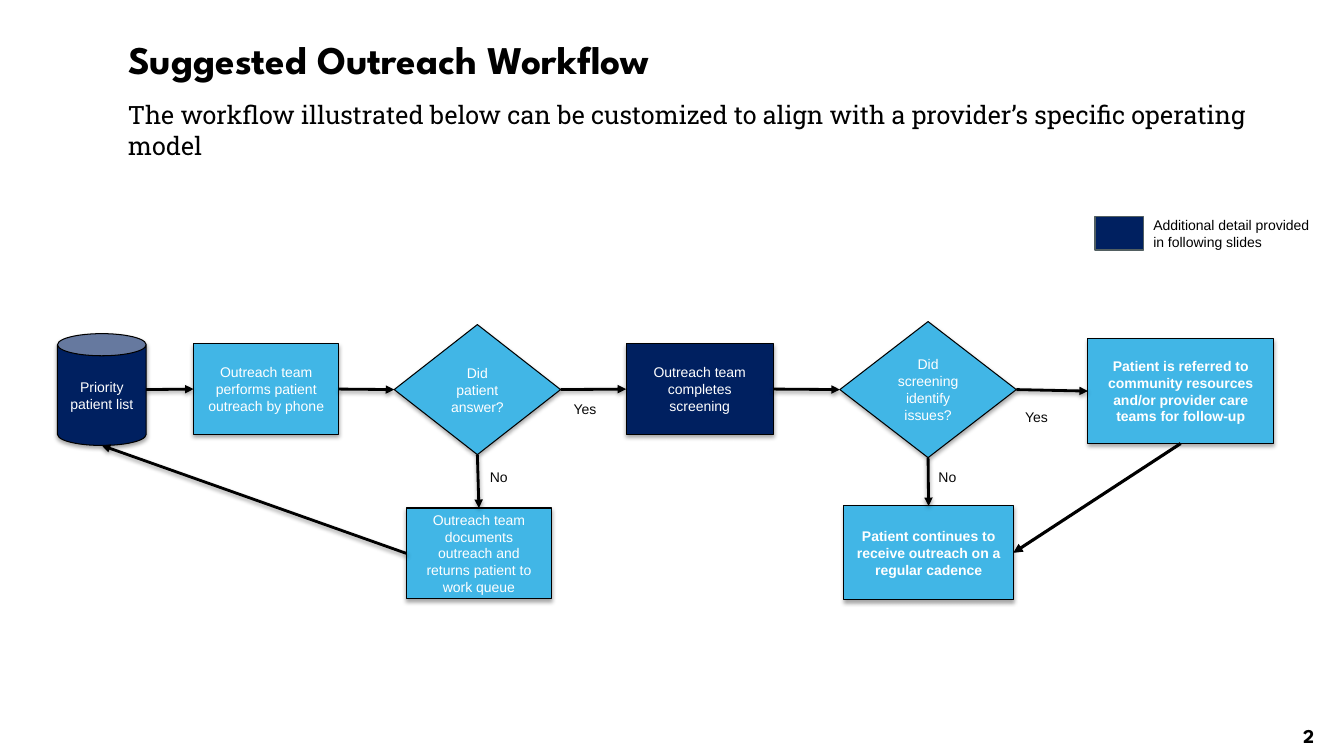
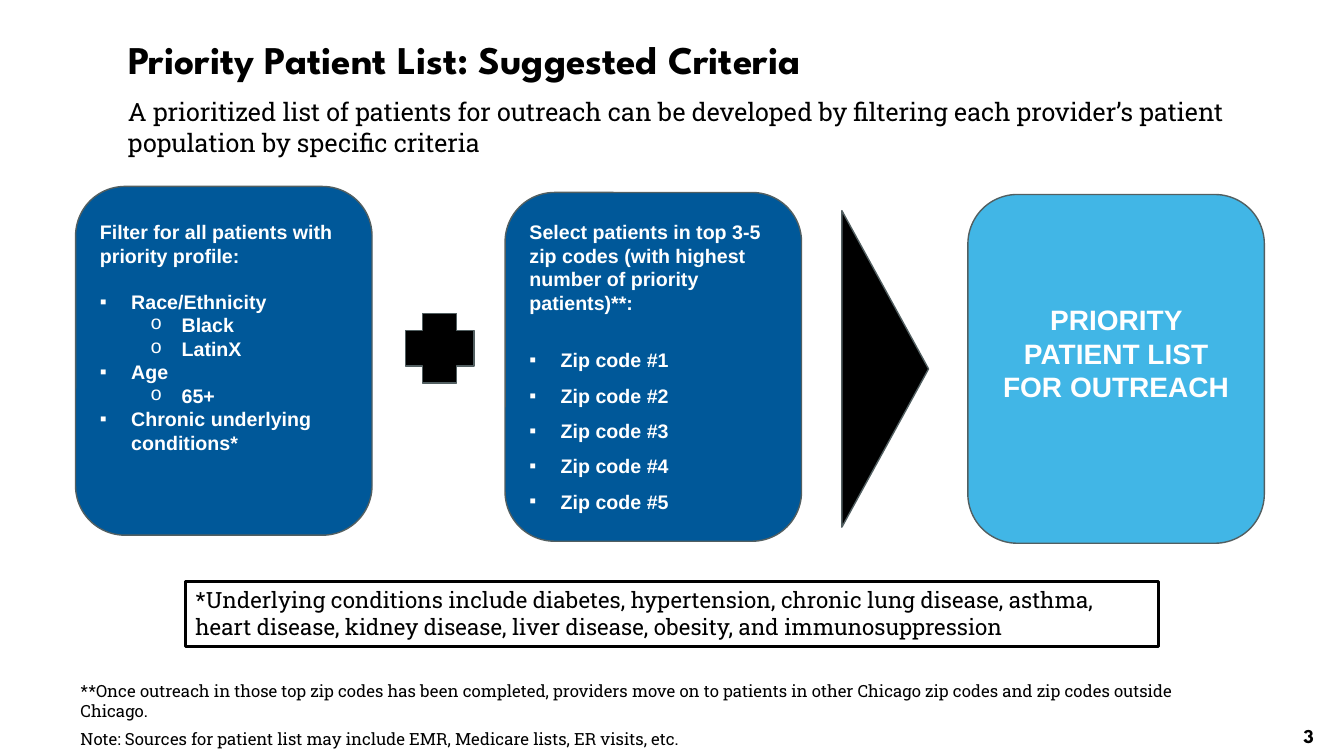
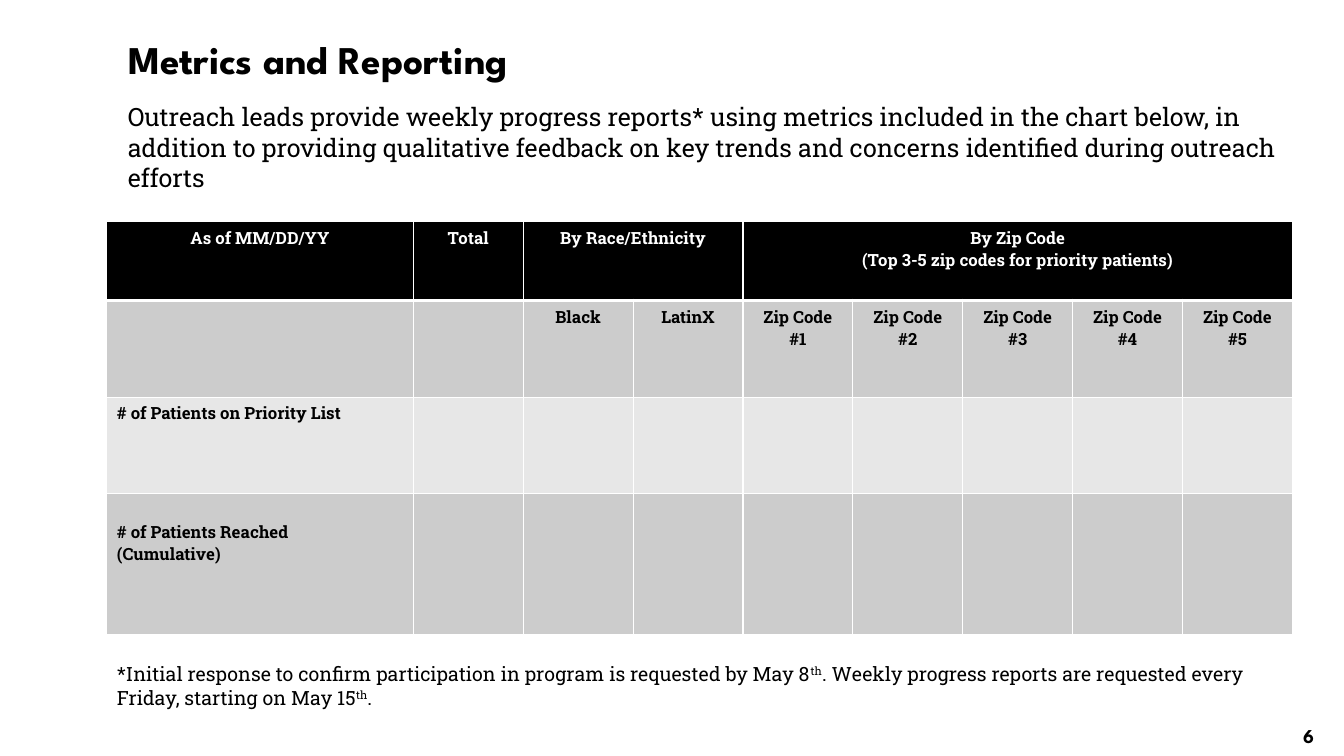
from dataclasses import dataclass

from lxml import etree
from pptx import Presentation
from pptx.dml.color import RGBColor
from pptx.enum import shapes, text
from pptx.oxml import ns
from pptx.util import Inches, Pt

BLACK = RGBColor(0x00, 0x00, 0x00)
WHITE = RGBColor(0xFF, 0xFF, 0xFF)
LABEL = RGBColor(0x08, 0x08, 0x08)
NAVY = RGBColor(0x00, 0x20, 0x60)
BLUE = RGBColor(0x00, 0x58, 0x99)
SKY = RGBColor(0x41, 0xB6, 0xE6)
OUTLINE = RGBColor(0x52, 0x5F, 0x61)
GREY = RGBColor(0xCC, 0xCC, 0xCC)
PALE = RGBColor(0xE7, 0xE7, 0xE7)

HEAD, SERIF, SANS = "League Spartan", "Roboto Slab", "Arial"
SHAPE = shapes.MSO_SHAPE
ALIGN = text.PP_ALIGN
ANCHOR = text.MSO_ANCHOR
TOP, LEFT, BOTTOM, RIGHT = range(4)
BULLETS = {"▪": SANS, "o": "Courier New"}


@dataclass
class Line:
    words: str
    bullet: str = ""
    level: int = 0
    spacing: float = 1
    before: float = 0


@dataclass
class Style:
    size: float
    font: str = SANS
    color: RGBColor = BLACK
    bold: bool = False
    align: ALIGN = ALIGN.LEFT


def add_xml(parent, tag, **attributes):
    return etree.SubElement(parent, ns.qn(tag), attributes)


def add_color(parent, color):
    return add_xml(add_xml(parent, "a:solidFill"), "a:srgbClr", val=str(color))


def add_shadow(effects, distance, opacity):
    shadow = add_xml(effects, "a:outerShdw", blurRad=str(Pt(3.1)), dist=str(Pt(distance)),
                     dir="5400000", rotWithShape="0")
    color = add_xml(shadow, "a:srgbClr", val=str(BLACK))
    add_xml(color, "a:alpha", val=str(opacity * 1000))


def side_point(shape, side):
    x = {LEFT: 0, RIGHT: shape.width}.get(side, shape.width // 2)
    y = {TOP: 0, BOTTOM: shape.height}.get(side, shape.height // 2)
    return shape.left + x, shape.top + y


def write(frame, lines, style):
    for index, line in enumerate(lines):
        if isinstance(line, str):
            line = Line(line)
        paragraph = frame.paragraphs[0] if index == 0 else frame.add_paragraph()
        for part, words in enumerate(line.words.split("^")):
            run = paragraph.add_run()
            run.text = words
            if part % 2:
                run._r.get_or_add_rPr().set("baseline", "30000")
        if line.bullet:
            properties = paragraph._p.get_or_add_pPr()
            properties.set("marL", str(Inches(0.31 + 0.5 * line.level)))
            properties.set("indent", str(Inches(-0.31)))
            add_xml(properties, "a:buFont", typeface=BULLETS[line.bullet])
            add_xml(properties, "a:buChar", char=line.bullet)
            paragraph.level = line.level
        if line.spacing != 1:
            paragraph.line_spacing = line.spacing
        if line.before:
            paragraph.space_before = Pt(line.before)
        paragraph.alignment = style.align
        font = paragraph.font
        font.name, font.size, font.bold = style.font, Pt(style.size), style.bold
        font.color.rgb = style.color


class Deck:
    TITLE = Style(28, HEAD, bold=True)
    NUMBER = Style(14, HEAD, bold=True, align=ALIGN.CENTER)
    LEAD = Style(18, SERIF)

    def __init__(self):
        self.file = Presentation()
        self.file.slide_width = Inches(13.33)
        self.file.slide_height = Inches(7.5)
        self.slide = None

    def start(self, heading, number, lead, lead_at):
        self.slide = self.file.slides.add_slide(self.file.slide_layouts[5])
        title = self.slide.shapes.title
        title.left, title.top, title.width, title.height = map(Inches, (1.17, 0, 11, 1.23))
        title.text_frame.auto_size = text.MSO_AUTO_SIZE.NONE
        title.text_frame.vertical_anchor = ANCHOR.MIDDLE
        write(title.text_frame, [Line(heading, spacing=0.9)], self.TITLE)
        self.words((12.63, 7.1, 0.7, 0.4), [number], self.NUMBER, anchor=ANCHOR.MIDDLE)
        self.words(lead_at, [lead], self.LEAD)

    def words(self, at, lines, style, anchor=ANCHOR.TOP, wrap=True):
        box = self.slide.shapes.add_textbox(*map(Inches, at))
        box.text_frame.word_wrap = wrap
        box.text_frame.vertical_anchor = anchor
        write(box.text_frame, lines, style)

    def shape(self, kind, at, fill=None, line=OUTLINE, width=1, lines=(), style=None,
              margin_top=None):
        shape = self.slide.shapes.add_shape(kind, *map(Inches, at))
        if fill is None:
            shape.fill.background()
        else:
            shape.fill.solid()
            shape.fill.fore_color.rgb = fill
        shape.line.color.rgb = line
        shape.line.width = Pt(width)
        shape.shadow.inherit = False
        frame = shape.text_frame
        frame.word_wrap = True
        if margin_top is not None:
            frame.vertical_anchor = ANCHOR.TOP
            frame.margin_top = Inches(margin_top)
        if lines:
            write(frame, lines, style)
        return shape

    def step(self, kind, at, words, fill=SKY, bold=False):
        style = Style(10, color=WHITE, bold=bold, align=ALIGN.CENTER)
        step = self.shape(kind, at, fill, BLACK, 0.75, [words], style)
        add_shadow(step._element.spPr.find(ns.qn("a:effectLst")), 1.8, 35)
        return step

    def arrow(self, origin, origin_side, target, target_side, width=2, shadow=True):
        arrow = self.slide.shapes.add_connector(
            shapes.MSO_CONNECTOR.STRAIGHT,
            *side_point(origin, origin_side), *side_point(target, target_side))
        if origin.auto_shape_type != SHAPE.CAN:
            arrow.begin_connect(origin, origin_side)
        if target.auto_shape_type != SHAPE.CAN:
            arrow.end_connect(target, target_side)
        arrow.line.color.rgb = BLACK
        arrow.line.width = Pt(width)
        add_xml(arrow.line._get_or_add_ln(), "a:tailEnd", type="triangle")
        effects = add_xml(arrow._element.spPr, "a:effectLst")
        if shadow:
            add_shadow(effects, 1.6, 38)

    def table(self, at, widths, heights):
        table = self.slide.shapes.add_table(len(heights), len(widths), *map(Inches, at)).table
        table.first_row = table.horz_banding = False
        for column, width in zip(table.columns, widths):
            column.width = Inches(width)
        for row, height in zip(table.rows, heights):
            row.height = Inches(height)
        return table

    def cell(self, cell, fill, top=1, bottom=1):
        cell.fill.solid()
        cell.fill.fore_color.rgb = fill
        properties = cell._tc.get_or_add_tcPr()
        borders = {"a:lnL": 1, "a:lnR": 1, "a:lnT": top, "a:lnB": bottom}
        for index, (tag, width) in enumerate(borders.items()):
            border = add_xml(properties, tag, w=str(Pt(width)))
            add_color(border, WHITE)
            properties.insert(index, border)


def workflow(deck):
    deck.start("Suggested Outreach Workflow", "2",
               "The workflow illustrated below can be customized to align with a provider’s "
               "specific operating model", (1.17, 0.94, 11.58, 0.71))
    patients = deck.step(SHAPE.CAN, (0.57, 3.31, 0.88, 1.11), "Priority patient list", NAVY)
    call = deck.step(SHAPE.RECTANGLE, (1.92, 3.41, 1.44, 0.9),
                     "Outreach team performs patient outreach by phone")
    answered = deck.step(SHAPE.FLOWCHART_DECISION, (3.91, 3.22, 1.65, 1.29),
                         "Did patient answer?")
    requeue = deck.step(SHAPE.RECTANGLE, (4.03, 5.04, 1.44, 0.9),
                        "Outreach team documents outreach and returns patient to work queue")
    screening = deck.step(SHAPE.RECTANGLE, (6.21, 3.41, 1.46, 0.9),
                          "Outreach team completes screening", NAVY)
    issues = deck.step(SHAPE.FLOWCHART_DECISION, (8.33, 3.19, 1.75, 1.35),
                       "Did screening identify issues?")
    referral = deck.step(SHAPE.RECTANGLE, (10.79, 3.36, 1.84, 1.04),
                         "Patient is referred to community resources and/or provider care "
                         "teams for follow-up", bold=True)
    cadence = deck.step(SHAPE.RECTANGLE, (8.37, 5.02, 1.68, 0.93),
                        "Patient continues to receive outreach on a regular cadence", bold=True)

    path_steps = [patients, call, answered, screening, issues, referral]
    for origin, target in zip(path_steps, path_steps[1:]):
        deck.arrow(origin, RIGHT, target, LEFT)
    deck.arrow(answered, BOTTOM, requeue, TOP)
    deck.arrow(requeue, LEFT, patients, BOTTOM)
    deck.arrow(issues, BOTTOM, cadence, TOP)
    deck.arrow(referral, BOTTOM, cadence, RIGHT, 2.25, shadow=False)

    for answer, left, top in (("No", 4.76, 4.6), ("Yes", 5.59, 3.92),
                              ("No", 9.21, 4.6), ("Yes", 10.07, 4)):
        deck.words((left, top, 0.57, 0.27), [answer], Style(10, color=LABEL))
    deck.shape(SHAPE.RECTANGLE, (10.86, 2.15, 0.48, 0.33), NAVY)
    deck.words((11.34, 2.1, 1.8, 0.44),
               ["Additional detail provided", "in following slides"], Style(10), wrap=False)


def criteria(deck):
    deck.start("Priority Patient List: Suggested Criteria", "3",
               "A prioritized list of patients for outreach can be developed by filtering each "
               "provider’s patient population by specific criteria", (1.17, 0.91, 12.05, 0.71))
    profile = [
        Line("Filter for all patients with priority profile:"),
        Line("Race/Ethnicity", "▪", before=16),
        Line("Black", "o", 1),
        Line("LatinX", "o", 1),
        Line("Age", "▪"),
        Line("65+", "o", 1),
        Line("Chronic underlying conditions*", "▪"),
    ]
    zip_codes = [Line("Select patients in top 3-5 zip codes (with highest number of priority "
                      "patients)**:")]
    zip_codes += [Line(f"Zip code #{n}", "▪", spacing=1.5, before=16 if n == 1 else 0)
                  for n in range(1, 6)]
    listed = Style(14, color=WHITE, bold=True)
    result = Style(20, color=WHITE, bold=True, align=ALIGN.CENTER)
    for left, top, fill, lines, style, margin in (
            (0.75, 1.85, BLUE, profile, listed, 0.19),
            (5.01, 1.91, BLUE, zip_codes, listed, 0.13),
            (9.6, 1.93, SKY, ["PRIORITY PATIENT LIST FOR OUTREACH"], result, 0.93)):
        deck.shape(SHAPE.ROUNDED_RECTANGLE, (left, top, 2.94, 3.46), fill,
                   lines=lines, style=style, margin_top=margin)
    deck.shape(SHAPE.CROSS, (4.02, 3.11, 0.68, 0.69), BLACK)
    pointer = deck.shape(SHAPE.PENTAGON, (8.35, 2.09, 0.86, 3.14), BLACK)
    pointer.adjustments[0] = 1
    deck.shape(SHAPE.RECTANGLE, (1.84, 5.77, 9.65, 0.64), None, BLACK, 2.25,
               ["*Underlying conditions include diabetes, hypertension, chronic lung disease, "
                "asthma, heart disease, kidney disease, liver disease, obesity, and "
                "immunosuppression"], Style(16, SERIF), 0.05)
    deck.words((0.7, 6.7, 11.47, 0.79),
               ["**Once outreach in those top zip codes has been completed, providers move on "
                "to patients in other Chicago zip codes and zip codes outside Chicago.",
                Line("Note: Sources for patient list may include EMR, Medicare lists, "
                     "ER visits, etc.", before=6)], Style(12, SERIF))


def metrics(deck):
    deck.start("Metrics and Reporting", "6",
               "Outreach leads provide weekly progress reports* using metrics included in the "
               "chart below, in addition to providing qualitative feedback on key trends and "
               "concerns identified during outreach efforts", (1.17, 0.96, 11.77, 1.01))
    table = deck.table((1.06, 2.2, 11.79, 4.1), [3.04] + [1.09] * 8, [0.78, 0.96, 0.96, 1.4])
    for row, fill in enumerate((BLACK, GREY, PALE, GREY)):
        for column in range(9):
            deck.cell(table.cell(row, column), fill,
                      top=3 if row == 1 else 1, bottom=3 if row == 0 else 1)
    for first, last in ((2, 3), (4, 8)):
        table.cell(0, first).merge(table.cell(0, last))

    header = Style(12, SERIF, WHITE, True, ALIGN.CENTER)
    group = Style(12, SERIF, BLACK, True, ALIGN.CENTER)
    measure = Style(12, SERIF, BLACK, True)
    entries = [
        (0, 0, ["As of MM/DD/YY"], header),
        (0, 1, ["Total"], header),
        (0, 2, ["By Race/Ethnicity"], header),
        (0, 4, ["By Zip Code", "(Top 3-5 zip codes for priority patients)"], header),
        (1, 2, ["Black"], group),
        (1, 3, ["LatinX"], group),
        (2, 0, ["# of Patients on Priority List"], measure),
        (3, 0, ["# of Patients Reached", "(Cumulative)"], measure),
    ]
    entries += [(1, 3 + n, [f"Zip Code #{n}"], group) for n in range(1, 6)]
    for row, column, lines, style in entries:
        write(table.cell(row, column).text_frame, lines, style)
    table.cell(3, 0).margin_top = Inches(0.27)
    deck.words((1.06, 6.52, 11.71, 0.57),
               ["*Initial response to confirm participation in program is requested by May "
                "8^th^. Weekly progress reports are requested every Friday, starting on May "
                "15^th^."], Style(14, SERIF))


def main():
    deck = Deck()
    workflow(deck)
    criteria(deck)
    metrics(deck)
    deck.file.save("out.pptx")


if __name__ == "__main__":
    main()
